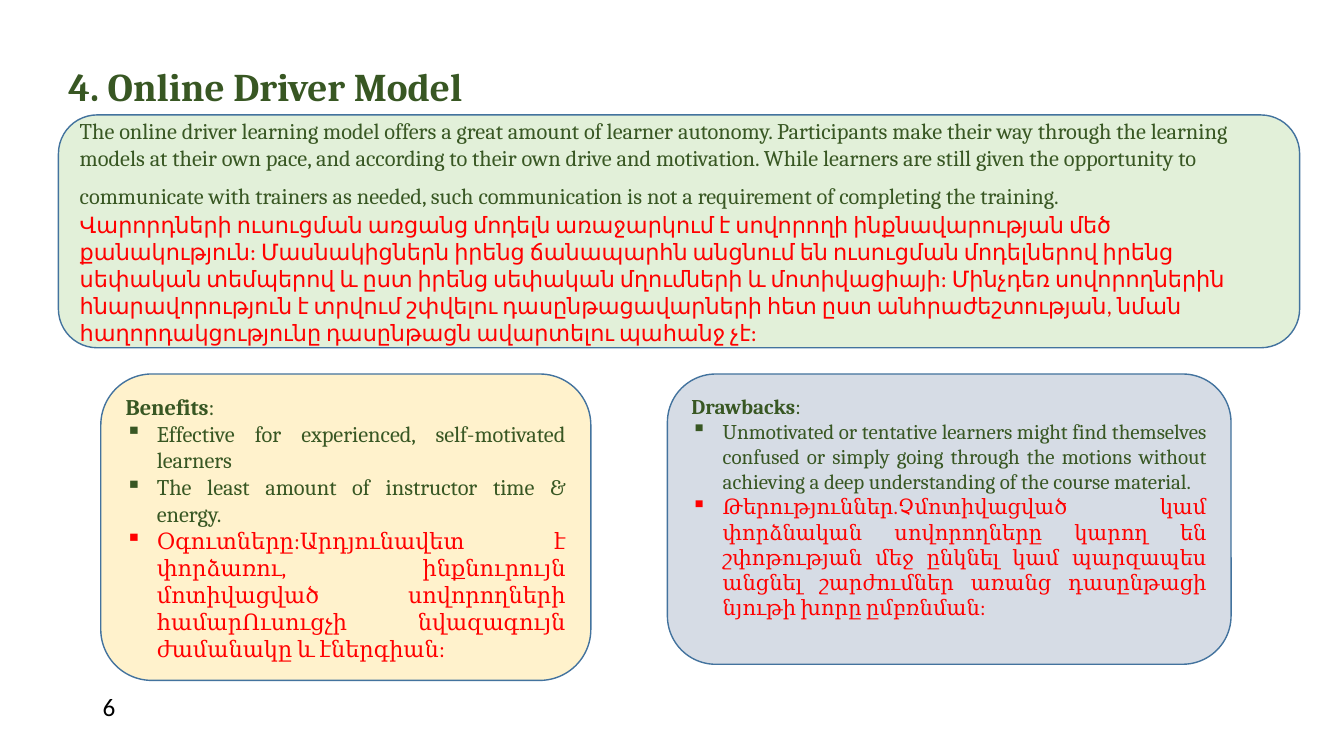
from dataclasses import dataclass

import pptx
import pptx.dml.color
import pptx.enum.shapes
import pptx.enum.text
import pptx.oxml.ns
import pptx.util
from lxml import etree

ALIGN = pptx.enum.text.PP_ALIGN
ANCHOR = pptx.enum.text.MSO_ANCHOR


@dataclass(frozen=True)
class Theme:
    serif: str = "Cambria"
    sans: str = "Calibri"
    green: str = "385723"
    red: str = "FF0000"
    black: str = "000000"
    white: str = "FFFFFF"
    outline: str = "43739E"
    mint: str = "E2F0D9"
    cream: str = "FFF2CC"
    mist: str = "D6DCE5"
    title_size: int = 28
    gap_size: int = 24
    number_size: int = 18
    body_size: int = 16
    small_size: int = 15


THEME = Theme()


@dataclass(frozen=True)
class Area:
    """Position and size as percentages of the slide."""
    left: float
    top: float
    width: float
    height: float


@dataclass(frozen=True)
class Span:
    text: str
    size: int = THEME.body_size
    color: str = THEME.green
    font: str = THEME.serif
    bold: bool = False


@dataclass(frozen=True)
class Para:
    spans: tuple[Span, ...]
    align: ALIGN = ALIGN.LEFT
    bullet: bool = False


@dataclass(frozen=True)
class Label:
    area: Area
    span: Span
    wrap: bool = True


@dataclass(frozen=True)
class Panel:
    area: Area
    fill: str
    paras: tuple[Para, ...]
    bottom_inset: float = 0.05


def listing(heading: str, items: tuple[str, ...], armenian: str, size: int) -> tuple[Para, ...]:
    """A bold heading, green bullets and a closing red bullet."""
    spans = [Span(item, size) for item in items] + [Span(armenian, size, THEME.red)]
    head = Para((Span(heading, size, bold=True), Span(":", size)), ALIGN.JUSTIFY)
    return (head, *(Para((span,), ALIGN.JUSTIFY, True) for span in spans))


# Content
LABELS = (
    Label(Area(6.9, 90.8, 3.75, 5.33),
          Span("6", THEME.number_size, THEME.black, THEME.sans), wrap=False),
    Label(Area(4.35, 7.6, 69.47, 7.6),
          Span("4. Online Driver Model", THEME.title_size, bold=True)),
)

PANELS = (
    Panel(Area(4.35, 15.2, 92.35, 30.8), THEME.mint, (
        Para((
            Span("The online driver learning model offers a great amount of learner autonomy. "
                 "Participants make their way through the learning models at their own pace, "
                 "and according to their own drive and motivation. While learners are still "
                 "given the opportunity to communicate with trainers as needed, such "
                 "communication is not a requirement of completing the training. "),
            Span(" ", THEME.gap_size, THEME.white, THEME.sans),
        )),
        Para((
            Span("Վարորդների ուսուցման առցանց մոդելն առաջարկում է սովորողի ինքնավարության մեծ "
                 "քանակություն: Մասնակիցներն իրենց ճանապարհն անցնում են ուսուցման մոդելներով "
                 "իրենց սեփական տեմպերով և ըստ իրենց սեփական մղումների և մոտիվացիայի: Մինչդեռ "
                 "սովորողներին հնարավորություն է տրվում շփվելու դասընթացավարների հետ ըստ "
                 "անհրաժեշտության, նման հաղորդակցությունը դասընթացն ավարտելու պահանջ չէ:",
                 color=THEME.red, font=THEME.sans),
        )),
    )),
    Panel(Area(7.5, 49.47, 36.46, 40.53), THEME.cream, listing(
        "Benefits",
        ("Effective for experienced, self-motivated learners",
         "The least amount of instructor time & energy. "),
        "Օգուտները:Արդյունավետ է փորձառու, ինքնուրույն մոտիվացված սովորողների "
        "համարՈւսուցչի նվազագույն ժամանակը և էներգիան:",
        THEME.body_size)),
    Panel(Area(49.66, 49.47, 41.94, 38.4), THEME.mist, listing(
        "Drawbacks",
        ("Unmotivated or tentative learners might find themselves confused or simply going "
         "through the motions without achieving a deep understanding of the course material.",),
        "Թերություններ.Չմոտիվացված կամ փորձնական սովորողները կարող են շփոթության մեջ ընկնել "
        "կամ պարզապես անցնել շարժումներ առանց դասընթացի նյութի խորը ըմբռնման:",
        THEME.small_size), bottom_inset=0.3),
)

# Slide
deck = pptx.Presentation()
deck.slide_width = pptx.util.Inches(13.33)
deck.slide_height = pptx.util.Inches(7.5)
page = deck.slides.add_slide(deck.slide_layouts[6])


def place(area: Area) -> tuple[int, int, int, int]:
    return (int(deck.slide_width * area.left / 100), int(deck.slide_height * area.top / 100),
            int(deck.slide_width * area.width / 100), int(deck.slide_height * area.height / 100))


def rgb(color: str) -> pptx.dml.color.RGBColor:
    return pptx.dml.color.RGBColor.from_string(color)


def add_bullet(paragraph) -> None:
    properties = paragraph._p.get_or_add_pPr()
    indent = pptx.util.Inches(0.31)
    properties.set("marL", str(indent))
    properties.set("indent", str(-indent))
    mark = etree.SubElement(properties, pptx.oxml.ns.qn("a:buChar"))
    mark.set("char", "▪")


def write(text_frame, paras: tuple[Para, ...]) -> None:
    for index, para in enumerate(paras):
        paragraph = text_frame.add_paragraph() if index else text_frame.paragraphs[0]
        paragraph.alignment = para.align
        if para.bullet:
            add_bullet(paragraph)
        for span in para.spans:
            run = paragraph.add_run()
            run.text = span.text
            run.font.name = span.font
            run.font.size = pptx.util.Pt(span.size)
            run.font.bold = span.bold
            run.font.color.rgb = rgb(span.color)


def draw_label(label: Label) -> None:
    box = page.shapes.add_textbox(*place(label.area))
    box.text_frame.word_wrap = label.wrap
    write(box.text_frame, (Para((label.span,)),))


def draw_panel(panel: Panel) -> None:
    box = page.shapes.add_shape(
        pptx.enum.shapes.MSO_SHAPE.ROUNDED_RECTANGLE, *place(panel.area))
    box.shadow.inherit = False
    box.fill.solid()
    box.fill.fore_color.rgb = rgb(panel.fill)
    box.line.color.rgb = rgb(THEME.outline)
    box.line.width = pptx.util.Pt(1)
    box.text_frame.word_wrap = True
    box.text_frame.vertical_anchor = ANCHOR.MIDDLE
    box.text_frame.margin_bottom = pptx.util.Inches(panel.bottom_inset)
    write(box.text_frame, panel.paras)


for label in LABELS:
    draw_label(label)
for panel in PANELS:
    draw_panel(panel)

deck.save("out.pptx")
